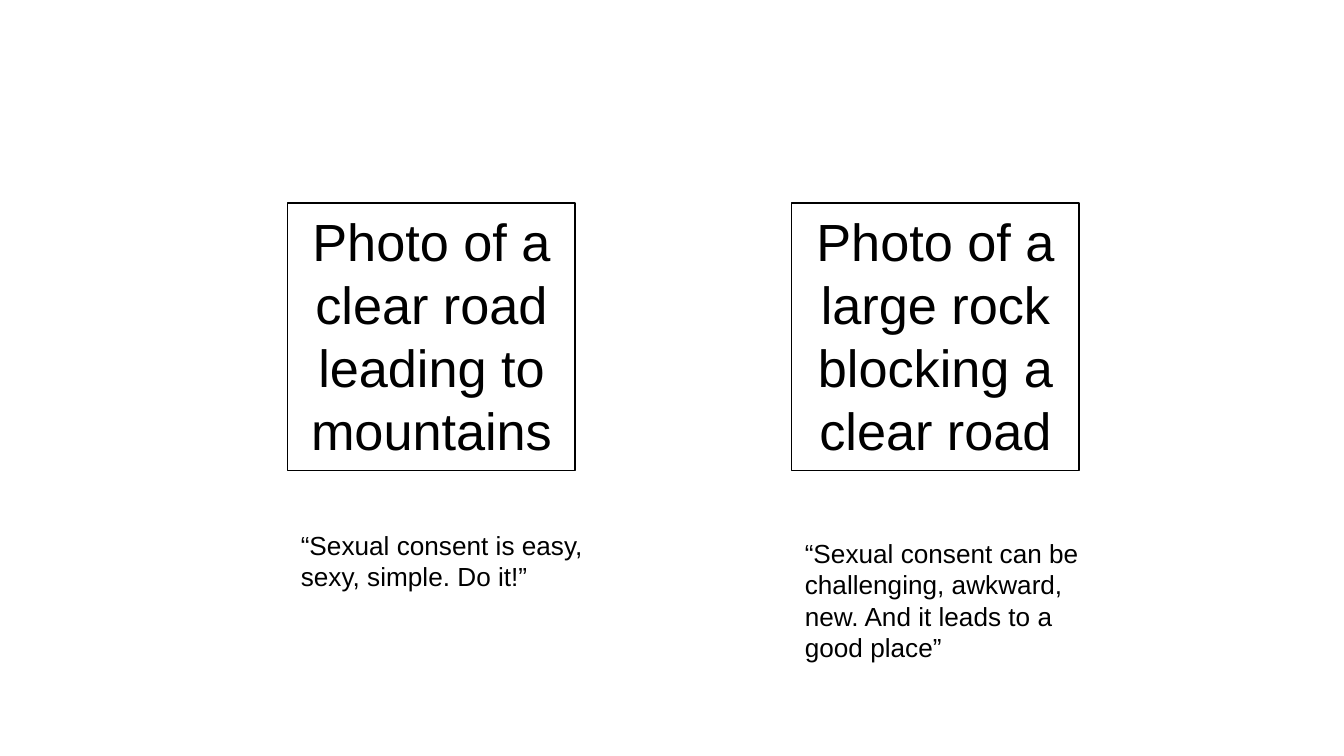
"""Build a slide pairing two photo frames with their captions."""
from dataclasses import dataclass

from pptx import Presentation
from pptx.dml.color import RGBColor
from pptx.enum.shapes import MSO_SHAPE as Shape
from pptx.enum.text import MSO_ANCHOR as Anchor, MSO_AUTO_SIZE as AutoSize, PP_ALIGN as Align
from pptx.slide import Slide
from pptx.text.text import TextFrame
from pptx.util import Inches, Pt

INK = "000000"
FRAME_TOP, FRAME_WIDTH, FRAME_HEIGHT = 1.51, 2.14, 1.99
CAPTION_WIDTH = 2.44
FIRST_LEFT, COLUMN_STEP = 2.14, 3.75


@dataclass
class Panel:
    photo: str
    caption: str
    caption_top: float
    caption_height: float


PANELS = [
    Panel("Photo of a clear road leading to mountains",
          "“Sexual consent is easy, sexy, simple. Do it!”", 3.89, 0.57),
    Panel("Photo of a large rock blocking a clear road",
          "“Sexual consent can be challenging, awkward, new. And it leads to a good place”",
          3.95, 1.04),
]


def color(value: str) -> RGBColor:
    return RGBColor.from_string(value)


def write(frame: TextFrame, text: str, size: int, align: Align) -> None:
    layout = {"word_wrap": True, "vertical_anchor": Anchor.TOP,
              "auto_size": AutoSize.SHAPE_TO_FIT_TEXT}
    for name, value in layout.items():
        setattr(frame, name, value)
    para = frame.paragraphs[0]
    para.alignment = align
    span = para.add_run()
    span.text = text
    for name, value in {"name": "Arial", "size": Pt(size)}.items():
        setattr(span.font, name, value)
    span.font.color.rgb = color(INK)


def draw_panel(page: Slide, panel: Panel, left: float) -> None:
    box = page.shapes.add_shape(Shape.RECTANGLE, Inches(left), Inches(FRAME_TOP),
                                Inches(FRAME_WIDTH), Inches(FRAME_HEIGHT))
    box.shadow.inherit = False
    box.fill.background()
    box.line.color.rgb = color(INK)
    box.line.width = Pt(0.75)
    write(box.text_frame, panel.photo, 28, Align.CENTER)

    caption = page.shapes.add_textbox(Inches(left), Inches(panel.caption_top),
                                      Inches(CAPTION_WIDTH), Inches(panel.caption_height))
    write(caption.text_frame, panel.caption, 14, Align.LEFT)


def main() -> None:
    deck = Presentation()
    deck.slide_width = Inches(10)
    deck.slide_height = deck.slide_width * 9 // 16
    page = deck.slides.add_slide(deck.slide_layouts.get_by_name("Blank"))
    for column, panel in enumerate(PANELS):
        draw_panel(page, panel, FIRST_LEFT + column * COLUMN_STEP)
    deck.save("out.pptx")


if __name__ == "__main__":
    main()
